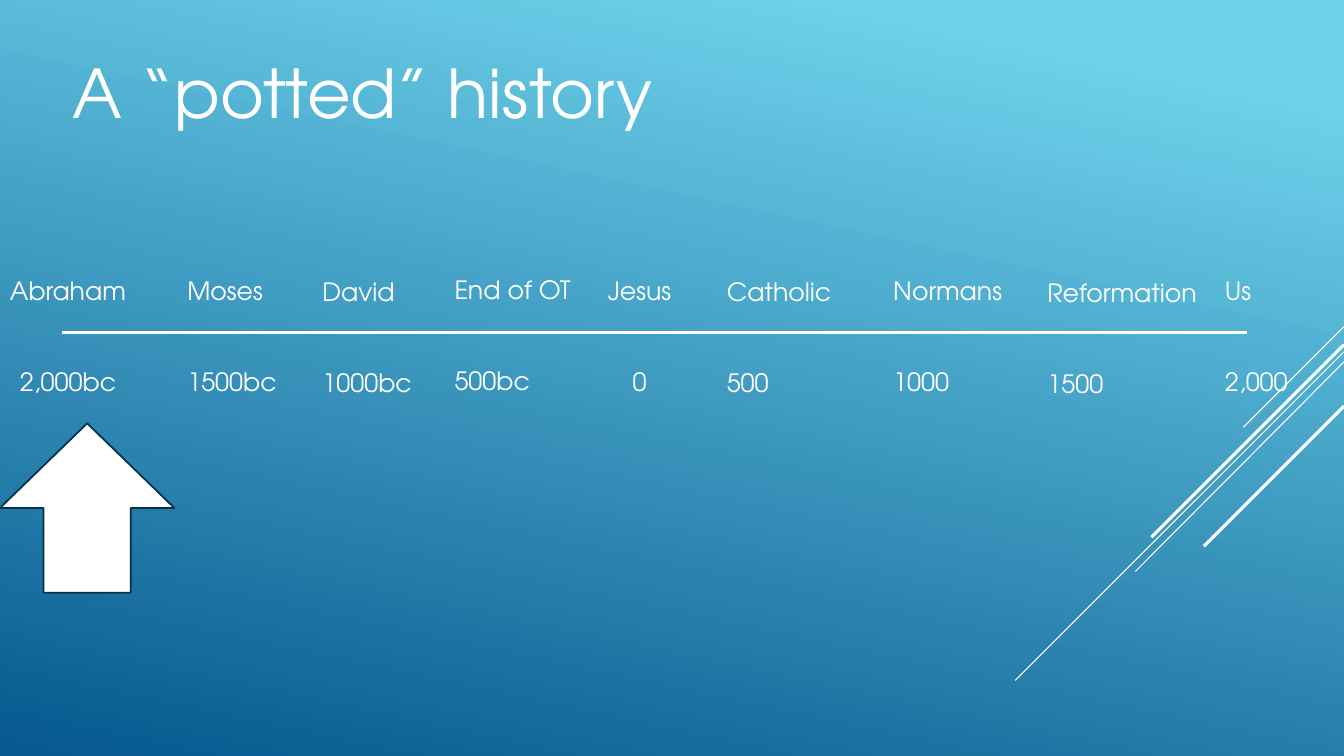
import pptx
import pptx.util
import pptx.dml.color
import pptx.enum.shapes
import pptx.enum.text
import pptx.oxml.ns
import lxml.etree

Inches = pptx.util.Inches
Pt = pptx.util.Pt
RGBColor = pptx.dml.color.RGBColor
ALIGN = pptx.enum.text.PP_ALIGN

WHITE = RGBColor(0xFF, 0xFF, 0xFF)
SKY = RGBColor(0x6E, 0xD2, 0xEB)
DEEP_BLUE = RGBColor(0x06, 0x58, 0x8E)
ARROW_OUTLINE = RGBColor(0x04, 0x31, 0x48)
FONT = "TeX Gyre Adventor"


def add_line(start, end, width):
    connector = slide.shapes.add_connector(
        pptx.enum.shapes.MSO_CONNECTOR.STRAIGHT, *map(Inches, start + end))
    connector.line.color.rgb = WHITE
    connector.line.width = Pt(width)
    lxml.etree.SubElement(connector._element.spPr, pptx.oxml.ns.qn("a:effectLst"))


def write(paragraph, text, size, alignment):
    paragraph.alignment = alignment
    run = paragraph.add_run()
    run.text = text
    for name, value in {"name": FONT, "size": Pt(size), "bold": False}.items():
        setattr(run.font, name, value)
    run.font.color.rgb = WHITE


presentation = pptx.Presentation()
presentation.slide_width = Inches(13.33)
presentation.slide_height = Inches(7.5)
slide = presentation.slides.add_slide(presentation.slide_layouts[5])

# Background, light at the top right
background = slide.background.fill
background.gradient()
background.gradient_angle = 258
for stop, (position, color) in zip(background.gradient_stops, [(0.1, SKY), (1, DEEP_BLUE)]):
    stop.position = position
    stop.color.rgb = color

# Diagonal lines running off the right edge
for right_y, left_x, left_y, width in [
    (3.24, 12.33, 4.24, 0.75),
    (3.49, 10.07, 6.75, 0.75),
    (3.59, 11.26, 5.67, 0.75),
    (3.42, 11.42, 5.33, 2.25),
    (4.03, 11.94, 5.42, 2.25),
]:
    add_line((13.33, right_y), (left_x, left_y), width)

# Title
title = slide.shapes.title
title_place = {"left": 0.62, "top": 0.43, "width": 9.33, "height": 0.96}
for name, value in title_place.items():
    setattr(title, name, Inches(value))
title.text_frame.vertical_anchor = pptx.enum.text.MSO_ANCHOR.MIDDLE
title.text_frame.auto_size = pptx.enum.text.MSO_AUTO_SIZE.NONE
write(title.text_frame.paragraphs[0], "A “potted” history", 48, ALIGN.LEFT)

# Timeline, with each event above the line and its date below
add_line((0.62, 3.3), (12.37, 3.3), 2.25)
for event, date, left, top, width, date_alignment in [
    ("Abraham", "2,000bc", 0, 2.68, 1.37, ALIGN.CENTER),
    ("Moses", "1500bc", 1.76, 2.68, 1.1, ALIGN.LEFT),
    ("David", "1000bc", 3.1, 2.69, 1.1, ALIGN.LEFT),
    ("End of OT", "500bc", 4.41, 2.67, 1.37, ALIGN.LEFT),
    ("Jesus", "0", 5.93, 2.68, 0.84, ALIGN.CENTER),
    ("Catholic", "500", 7.11, 2.69, 1.25, ALIGN.LEFT),
    ("Normans", "1000", 8.76, 2.68, 1.29, ALIGN.LEFT),
    ("Reformation", "1500", 10.29, 2.7, 1.7, ALIGN.LEFT),
    ("Us", "2,000", 12.05, 2.68, 0.83, ALIGN.LEFT),
]:
    text_box = slide.shapes.add_textbox(*map(Inches, (left, top, width, 1.31)))
    text_frame = text_box.text_frame
    text_frame.word_wrap = False
    text_frame.auto_size = pptx.enum.text.MSO_AUTO_SIZE.SHAPE_TO_FIT_TEXT
    write(text_frame.paragraphs[0], event, 18, ALIGN.LEFT)
    date_paragraph = text_frame.add_paragraph()
    date_paragraph.space_before = Pt(43.5)
    write(date_paragraph, date, 18, date_alignment)

# Arrow pointing at Abraham
arrow = slide.shapes.add_shape(
    pptx.enum.shapes.MSO_SHAPE.UP_ARROW, *map(Inches, (0, 4.2, 1.73, 1.68)))
arrow.shadow.inherit = False
arrow.fill.solid()
arrow.fill.fore_color.rgb = WHITE
arrow.line.color.rgb = ARROW_OUTLINE
arrow.line.width = Pt(1.25)

presentation.save("out.pptx")
